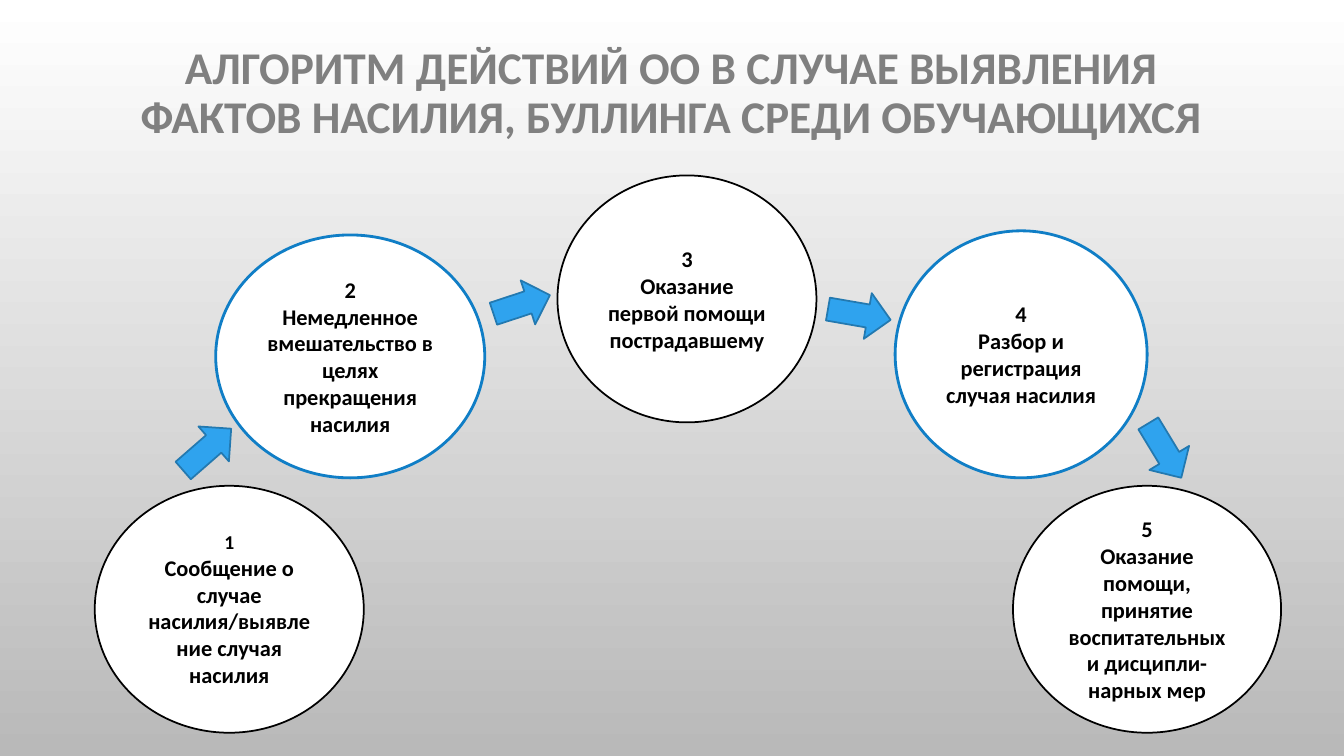
"""Builds a slide with a five-step arc of ovals joined by block arrows."""
from typing import NamedTuple

from pptx import Presentation
from pptx.dml.color import RGBColor
from pptx.enum import shapes, text
from pptx.util import Pt

WHITE = RGBColor(0xFF, 0xFF, 0xFF)
BLACK = RGBColor(0x00, 0x00, 0x00)
GREY = RGBColor(0x80, 0x80, 0x80)
SILVER = RGBColor(0xB9, 0xB9, 0xB9)
BLUE = RGBColor(0x10, 0x7E, 0xC6)
SKY = RGBColor(0x2F, 0xA3, 0xEE)
NAVY = RGBColor(0x23, 0x79, 0xB0)
FONT = "Calibri"
TITLE = ("АЛГОРИТМ ДЕЙСТВИЙ ОО В СЛУЧАЕ ВЫЯВЛЕНИЯ",
         "ФАКТОВ НАСИЛИЯ, БУЛЛИНГА СРЕДИ ОБУЧАЮЩИХСЯ")


class Step(NamedTuple):
    left: float
    top: float
    width: float
    height: float
    lines: tuple[str, ...]
    line: RGBColor = BLACK
    weight: float = 1.25
    number_size: float = 16


class Arrow(NamedTuple):
    left: float
    top: float
    width: float
    angle: float


STEPS = (
    Step(67.7, 347, 192.2, 176.4,
         ("Сообщение о случае насилия/выявление случая насилия",), number_size=14),
    Step(154.1, 167.8, 192.2, 173.5,
         ("Немедленное вмешательство в целях прекращения насилия",), BLUE, 2),
    Step(398.2, 125.3, 185, 176.4, ("Оказание первой помощи пострадавшему",)),
    Step(639.4, 164.9, 180, 176.4, ("Разбор и регистрация случая насилия",), BLUE, 2),
    Step(723.6, 347, 191.5, 176.4,
         ("Оказание помощи, принятие воспитательных и дисципли-", "нарных мер")),
)
ARROWS = (
    Arrow(125.3, 304.6, 45.4, 318.9),
    Arrow(351.4, 200.9, 42.5, 341.8),
    Arrow(591.1, 208.1, 45.4, 9.8),
    Arrow(809.3, 305.3, 45.4, 58.8),
)
ARROW_HEIGHT = 33.1


def add_run(p, words: str, size: float, color: RGBColor) -> None:
    """Add one bold run to a paragraph."""
    r = p.add_run()
    r.text = words
    r.font.name = FONT
    r.font.size = Pt(size)
    r.font.bold = True
    r.font.color.rgb = color


def style(sp, fill: RGBColor, line: RGBColor, weight: float) -> None:
    """Give a shape a flat fill and an outline."""
    sp.shadow.inherit = False
    sp.fill.solid()
    sp.fill.fore_color.rgb = fill
    sp.line.color.rgb = line
    sp.line.width = Pt(weight)


def add_background(s) -> None:
    """Shade the slide from white at the top to silver at the bottom."""
    fill = s.background.fill
    fill.gradient()
    fill.gradient_angle = 270
    for stop, color in zip(fill.gradient_stops, (WHITE, SILVER)):
        stop.color.rgb = color


def add_title(s) -> None:
    """Add the two-line heading."""
    tf = s.shapes.add_textbox(Pt(67.7), Pt(30), Pt(823.7), Pt(74)).text_frame
    tf.word_wrap = True
    tf.vertical_anchor = text.MSO_ANCHOR.MIDDLE
    p = tf.paragraphs[0]
    p.alignment = text.PP_ALIGN.CENTER
    p.line_spacing = 0.9
    for i, words in enumerate(TITLE):
        if i:
            p.add_line_break()
        add_run(p, words, 32.4, GREY)


def add_step(s, number: int, step: Step) -> None:
    """Add one numbered oval."""
    sp = s.shapes.add_shape(shapes.MSO_SHAPE.OVAL, Pt(step.left), Pt(step.top),
                            Pt(step.width), Pt(step.height))
    style(sp, WHITE, step.line, step.weight)
    tf = sp.text_frame
    tf.word_wrap = True
    tf.vertical_anchor = text.MSO_ANCHOR.MIDDLE
    for i, words in enumerate((str(number), *step.lines)):
        p = tf.add_paragraph() if i else tf.paragraphs[0]
        p.alignment = text.PP_ALIGN.CENTER
        add_run(p, words, 16 if i else step.number_size, BLACK)


def add_arrow(s, arrow: Arrow) -> None:
    """Add one turned block arrow."""
    sp = s.shapes.add_shape(shapes.MSO_SHAPE.RIGHT_ARROW, Pt(arrow.left), Pt(arrow.top),
                            Pt(arrow.width), Pt(ARROW_HEIGHT))
    sp.rotation = arrow.angle
    style(sp, SKY, NAVY, 1.25)


def main() -> None:
    """Build and save the slide."""
    prs = Presentation()
    prs.slide_width, prs.slide_height = Pt(960), Pt(540)
    s = prs.slides.add_slide(prs.slide_layouts[6])
    add_background(s)
    add_title(s)
    for number, step in enumerate(STEPS, 1):
        add_step(s, number, step)
    for arrow in ARROWS:
        add_arrow(s, arrow)
    prs.save("out.pptx")


if __name__ == "__main__":
    main()
